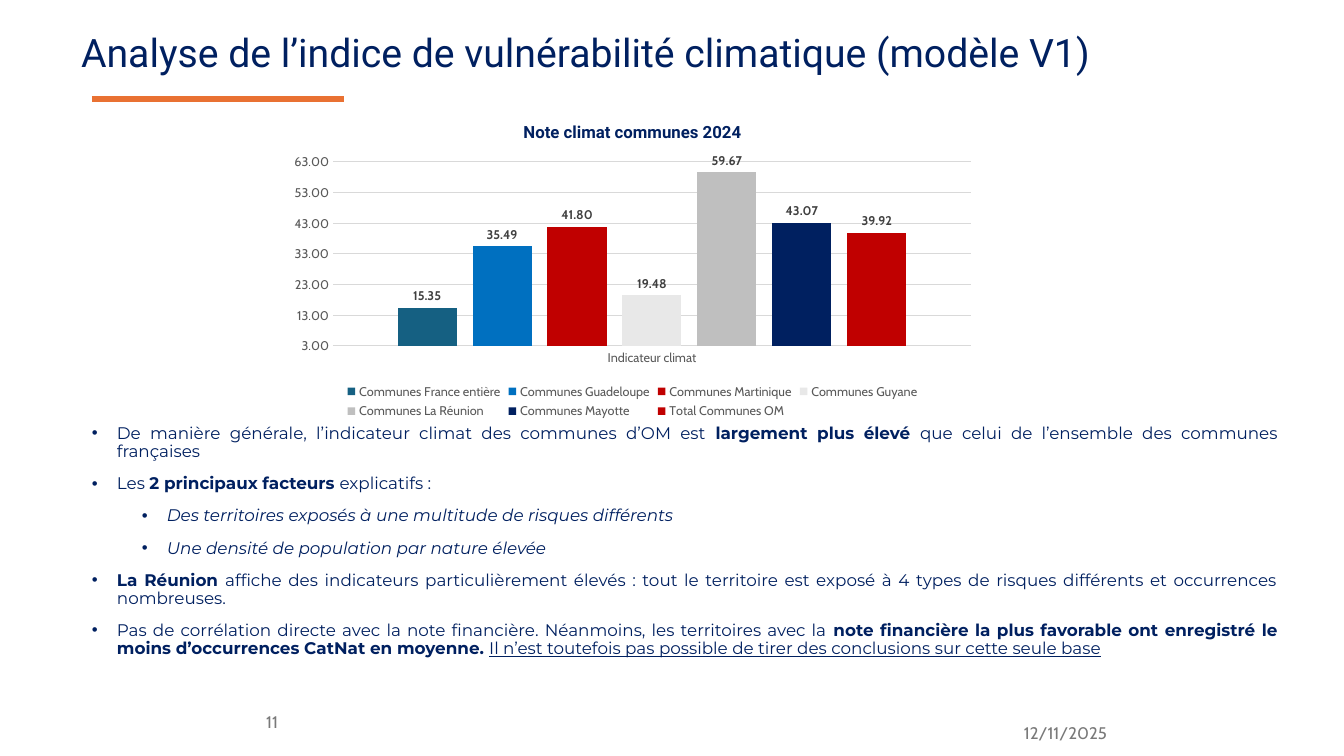
"""Builds the slide on the climate vulnerability index of overseas municipalities."""
from lxml import etree
from pptx import Presentation
from pptx.chart.data import CategoryChartData
from pptx.dml.color import RGBColor
from pptx.enum.chart import XL_CHART_TYPE, XL_LABEL_POSITION, XL_LEGEND_POSITION, XL_TICK_MARK
from pptx.enum.text import MSO_ANCHOR, MSO_AUTO_SIZE, PP_ALIGN
from pptx.enum.shapes import MSO_CONNECTOR
from pptx.oxml.ns import qn
from pptx.util import Pt

COLUMNS = XL_CHART_TYPE.COLUMN_CLUSTERED
OUTSIDE_END = XL_LABEL_POSITION.OUTSIDE_END
BOTTOM = XL_LEGEND_POSITION.BOTTOM
NO_TICK = XL_TICK_MARK.NONE
STRAIGHT = MSO_CONNECTOR.STRAIGHT
LEFT, RIGHT, JUSTIFY = PP_ALIGN.LEFT, PP_ALIGN.RIGHT, PP_ALIGN.JUSTIFY
MIDDLE, TOP = MSO_ANCHOR.MIDDLE, MSO_ANCHOR.TOP
FIXED_SIZE = MSO_AUTO_SIZE.NONE

EMU_PER_PX = 914400 / 100.8
INDENT = 25
COLORS = {
    "navy": "002060", "orange": "E97132", "footer": "797979", "black": "000000",
    "axis": "595959", "label": "404040", "grid": "D9D9D9", "teal": "156082",
    "blue": "0070C0", "red": "C00000", "pale": "E8E8E8", "silver": "BFBFBF",
}
SCORES = [
    ("Communes France entière", 15.35, "teal"),
    ("Communes Guadeloupe", 35.49, "blue"),
    ("Communes Martinique", 41.80, "red"),
    ("Communes Guyane", 19.48, "pale"),
    ("Communes La Réunion", 59.67, "silver"),
    ("Communes Mayotte", 43.07, "navy"),
    ("Total Communes OM", 39.92, "red"),
]
FINDINGS = [
    (0, [("De manière générale, l’indicateur climat des communes d’OM est ", ""),
         ("largement plus élevé ", "b"),
         ("que celui de l’ensemble des communes françaises", "")]),
    (0, [("Les ", ""), ("2 principaux facteurs ", "b"), ("explicatifs :", "")]),
    (1, [("Des territoires exposés à une multitude de risques différents", "i")]),
    (1, [("Une densité de population par nature élevée", "i")]),
    (0, [("La Réunion ", "b"),
         ("affiche des indicateurs particulièrement élevés : tout le territoire est exposé "
          "à 4 types de risques différents et occurrences nombreuses.", "")]),
    (0, [("Pas de corrélation directe avec la note financière. Néanmoins, les territoires "
          "avec la ", ""),
         ("note financière la plus favorable ont enregistré le moins d’occurrences CatNat "
          "en moyenne. ", "b"),
         ("Il n’est toutefois pas possible de tirer des conclusions sur cette seule base", "u")]),
]


def px(*lengths):
    """Turn pixel lengths into EMU."""
    return [round(length * EMU_PER_PX) for length in lengths]


def color(name):
    """Return the named colour."""
    return RGBColor.from_string(COLORS[name])


def style_font(font, name, size, color_name, bold=False):
    """Set the face, size, colour and weight of a font."""
    font.name, font.size, font.bold = name, Pt(size), bold
    font.color.rgb = color(color_name)


class SlideBuilder:
    """Holds the style and the current slide."""

    title_font, body_font, chart_font = "Roboto", "Montserrat", "Cabin"

    def __init__(self, presentation):
        """Add a title-only slide."""
        self.slide = presentation.slides.add_slide(presentation.slide_layouts[5])

    def title(self, text, box):
        """Move and format the title placeholder."""
        shape = self.slide.shapes.title
        shape.left, shape.top, shape.width, shape.height = px(*box)
        frame = shape.text_frame
        frame.auto_size, frame.vertical_anchor = FIXED_SIZE, MIDDLE
        paragraph = frame.paragraphs[0]
        paragraph.alignment, paragraph.line_spacing = LEFT, 0.9
        self.run(paragraph, text, self.title_font, 28, "navy")

    def run(self, paragraph, text, font_name, size, color_name, marks=""):
        """Add one run; marks may hold b, i and u."""
        run = paragraph.add_run()
        run.text = text
        style_font(run.font, font_name, size, color_name, "b" in marks)
        run.font.italic, run.font.underline = "i" in marks, "u" in marks

    def rule(self, start, end, color_name, width):
        """Draw a straight line."""
        line = self.slide.shapes.add_connector(STRAIGHT, *px(*start, *end))
        line.line.color.rgb, line.line.width = color(color_name), Pt(width)
        etree.SubElement(line._element.spPr, qn("a:effectLst"))

    def text_frame(self, box, anchor):
        """Add a wrapping text box and return its frame."""
        frame = self.slide.shapes.add_textbox(*px(*box)).text_frame
        frame.word_wrap, frame.vertical_anchor = True, anchor
        return frame

    def footer(self, text, box, alignment):
        """Add a small grey line of text."""
        paragraph = self.text_frame(box, MIDDLE).paragraphs[0]
        paragraph.alignment = alignment
        self.run(paragraph, text, self.chart_font, 12, "footer")

    def bullets(self, items, box):
        """Add a justified list of two levels."""
        frame = self.text_frame(box, TOP)
        for index, (level, runs) in enumerate(items):
            paragraph = frame.add_paragraph() if index else frame.paragraphs[0]
            paragraph.level, paragraph.alignment = level, JUSTIFY
            paragraph.line_spacing = 0.9
            paragraph.space_before = Pt(10 if index else 0)
            margin, hanging = px(INDENT * (1 + 2 * level), -INDENT)
            properties = paragraph._p.get_or_add_pPr()
            properties.set("marL", str(margin))
            properties.set("indent", str(hanging))
            etree.SubElement(properties, qn("a:buFont"), typeface="Arial")
            etree.SubElement(properties, qn("a:buChar"), char="•")
            for text, marks in runs:
                self.run(paragraph, text, self.body_font, 12, "navy", marks)

    def column_chart(self, title, category, scores, box, plot_box):
        """Add a column chart with one series for each score."""
        data = CategoryChartData(number_format="0.00")
        data.categories = [category]
        for name, value, _ in scores:
            data.add_series(name, [value])
        chart = self.slide.shapes.add_chart(COLUMNS, *px(*box), data).chart
        style_font(chart.font, self.chart_font, 10, "black")
        chart.has_title = True
        heading = chart.chart_title
        heading.include_in_layout = False
        self.run(heading.text_frame.paragraphs[0], title, self.title_font, 12, "navy", "b")
        chart.has_legend = True
        chart.legend.position, chart.legend.include_in_layout = BOTTOM, False
        style_font(chart.legend.font, self.chart_font, 9, "axis")
        plot = chart.plots[0]
        plot.gap_width, plot.overlap, plot.vary_by_categories = 219, -27, False
        for series, (_, _, color_name) in zip(plot.series, scores):
            series.format.fill.solid()
            series.format.fill.fore_color.rgb = color(color_name)
            labels = series.data_labels
            labels.show_value, labels.position = True, OUTSIDE_END
            labels.number_format, labels.number_format_is_linked = "0.00", False
            style_font(labels.font, self.chart_font, 9, "label", True)
        self.axes(chart)
        self.place_plot(chart, box, plot_box)

    def axes(self, chart):
        """Format both axes and the grid."""
        for axis in (chart.category_axis, chart.value_axis):
            axis.major_tick_mark = axis.minor_tick_mark = NO_TICK
            style_font(axis.tick_labels.font, self.chart_font, 9, "axis")
        values = chart.value_axis
        values.minimum_scale, values.maximum_scale, values.major_unit = 3, 63, 10
        values.tick_labels.number_format = "0.00"
        values.tick_labels.number_format_is_linked = False
        values.format.line.fill.background()
        values.has_major_gridlines = True
        for line in (chart.category_axis.format.line, values.major_gridlines.format.line):
            line.color.rgb, line.width = color("grid"), Pt(0.75)

    def place_plot(self, chart, box, plot_box):
        """Fix the inner plot area inside the chart."""
        area = chart._chartSpace.chart.plotArea
        for old_layout in area.findall(qn("c:layout")):
            area.remove(old_layout)
        layout = etree.Element(qn("c:layout"))
        area.insert(0, layout)
        manual = etree.SubElement(layout, qn("c:manualLayout"))
        left, top, width, height = box
        plot_left, plot_top, plot_width, plot_height = plot_box
        settings = {
            "layoutTarget": "inner", "xMode": "edge", "yMode": "edge",
            "x": (plot_left - left) / width, "y": (plot_top - top) / height,
            "w": plot_width / width, "h": plot_height / height,
        }
        for tag, value in settings.items():
            etree.SubElement(manual, qn(f"c:{tag}"), val=str(value))


def main():
    """Build and save the slide."""
    presentation = Presentation()
    presentation.slide_width, presentation.slide_height = px(1344, 756)
    builder = SlideBuilder(presentation)
    builder.rule((92, 99), (344, 99), "orange", 4.5)
    builder.title("Analyse de l’indice de vulnérabilité climatique (modèle V1)", (71, 27, 1256, 56))
    builder.footer("12/11/2025", (1014, 714, 187, 38), LEFT)
    builder.footer("11", (101, 703, 187, 38), RIGHT)
    builder.bullets(FINDINGS, (82, 420, 1206, 228))
    builder.column_chart("Note climat communes 2024", "Indicateur climat", SCORES,
                         (280, 106, 705, 317), (333, 162, 638, 184))
    presentation.save("out.pptx")


if __name__ == "__main__":
    main()
